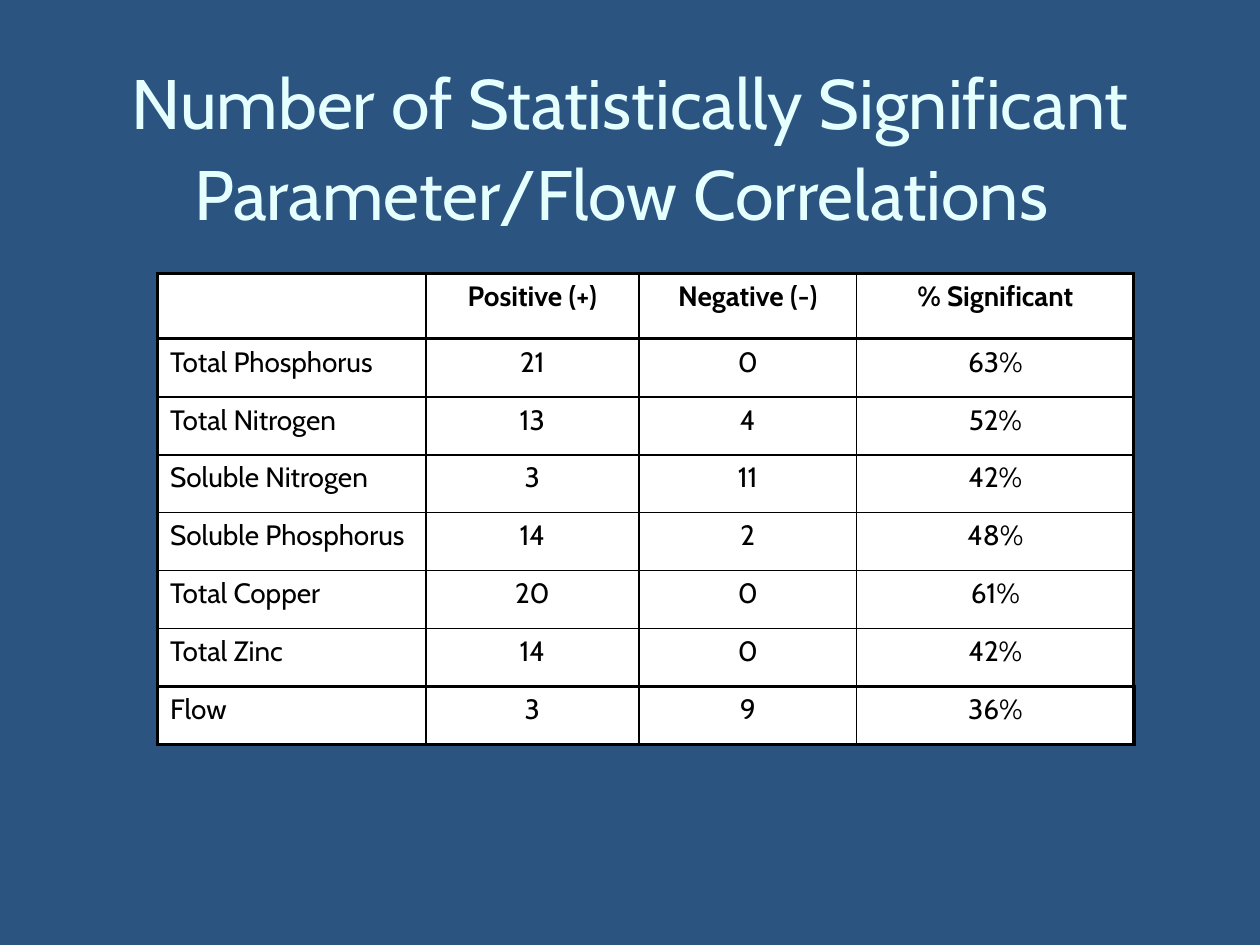
from dataclasses import dataclass

from lxml import etree
from pptx import Presentation
from pptx.dml.color import RGBColor
from pptx.enum.text import MSO_ANCHOR, PP_ALIGN
from pptx.oxml.ns import qn
from pptx.util import Inches, Pt

LEFT, CENTER = PP_ALIGN.LEFT, PP_ALIGN.CENTER
MIDDLE = MSO_ANCHOR.MIDDLE
BLANK_LAYOUT = 6


@dataclass(frozen=True)
class Theme:
    font: str = "Cabin"
    background: str = "2B5481"
    title: str = "E5FFFF"
    cell: str = "FFFFFF"
    ink: str = "000000"
    title_size: int = 40
    title_end_size: int = 44
    table_size: int = 16


THEME = Theme()

TITLE = "Number of Statistically Significant Parameter/Flow Correlations"
CORRELATIONS = [
    ("", "Positive (+)", "Negative (-)", "% Significant"),
    ("Total Phosphorus", "21", "0", "63%"),
    ("Total Nitrogen", "13", "4", "52%"),
    ("Soluble Nitrogen", "3", "11", "42%"),
    ("Soluble Phosphorus", "14", "2", "48%"),
    ("Total Copper", "20", "0", "61%"),
    ("Total Zinc", "14", "0", "42%"),
    ("Flow", "3", "9", "36%"),
]
COLUMN_WIDTHS = [2.13, 1.69, 1.73, 2.2]
HEADER_HEIGHT, BODY_HEIGHT = 0.52, 0.46
HANGING_INDENT = 0.38

# Line widths in points
THIN, HEAVY, FLOW_RULE = 1, 2, 2.25
ROW_RULES = [HEAVY, HEAVY] + [THIN] * 5 + [FLOW_RULE, FLOW_RULE]


def add_run(paragraph, text, color, size, bold=False):
    run = paragraph.add_run()
    run.text = text
    font_format = {"name": THEME.font, "size": Pt(size), "bold": bold}
    for attribute, value in font_format.items():
        setattr(run.font, attribute, value)
    run.font.color.rgb = RGBColor.from_string(color)


def add_title(slide):
    title = slide.shapes.add_textbox(Inches(0.5), Inches(0.42), Inches(9), Inches(1.5))
    frame = title.text_frame
    frame_format = {"word_wrap": True, "vertical_anchor": MIDDLE}
    for attribute, value in frame_format.items():
        setattr(frame, attribute, value)
    paragraph = frame.paragraphs[0]
    paragraph.alignment = CENTER
    add_run(paragraph, TITLE, THEME.title, THEME.title_size)
    add_run(paragraph, " ", THEME.title, THEME.title_end_size)


def set_borders(cell, widths):
    """Draw the cell's borders from widths in points, keyed L, R, T, B in that order."""
    properties = cell._tc.get_or_add_tcPr()
    for side, width in widths.items():
        line = etree.SubElement(properties, qn(f"a:ln{side}"), w=str(Pt(width)))
        fill = etree.SubElement(line, qn("a:solidFill"))
        etree.SubElement(fill, qn("a:srgbClr"), val=THEME.ink)


def border_widths(row, column):
    outer = FLOW_RULE if row == len(CORRELATIONS) - 1 else HEAVY
    return {
        "L": outer if column == 0 else THIN,
        "R": outer if column == len(COLUMN_WIDTHS) - 1 else THIN,
        "T": ROW_RULES[row],
        "B": ROW_RULES[row + 1],
    }


def fill_cell(cell, text, row, column):
    set_borders(cell, border_widths(row, column))
    cell.fill.solid()
    cell.fill.fore_color.rgb = RGBColor.from_string(THEME.cell)
    if not text:
        return
    paragraph = cell.text_frame.paragraphs[0]
    paragraph.alignment = LEFT if column == 0 else CENTER
    indents = paragraph._p.get_or_add_pPr()
    indents.set("marL", str(Inches(HANGING_INDENT)))
    indents.set("indent", str(-Inches(HANGING_INDENT)))
    add_run(paragraph, text, THEME.ink, THEME.table_size, bold=row == 0)


def add_correlation_table(slide):
    heights = [HEADER_HEIGHT] + [BODY_HEIGHT] * (len(CORRELATIONS) - 1)
    table = slide.shapes.add_table(
        len(heights), len(COLUMN_WIDTHS), Inches(1.25), Inches(2.17),
        Inches(sum(COLUMN_WIDTHS)), Inches(sum(heights)),
    ).table
    table.first_row = table.horz_banding = False
    for column, width in zip(table.columns, COLUMN_WIDTHS):
        column.width = Inches(width)
    for row, height in zip(table.rows, heights):
        row.height = Inches(height)
    for row, texts in enumerate(CORRELATIONS):
        for column, text in enumerate(texts):
            fill_cell(table.cell(row, column), text, row, column)


def main():
    presentation = Presentation()
    presentation.slide_width = Inches(10)
    presentation.slide_height = Inches(7.5)
    slide = presentation.slides.add_slide(presentation.slide_layouts[BLANK_LAYOUT])
    background = slide.background.fill
    background.solid()
    background.fore_color.rgb = RGBColor.from_string(THEME.background)
    add_title(slide)
    add_correlation_table(slide)
    presentation.save("out.pptx")


if __name__ == "__main__":
    main()
